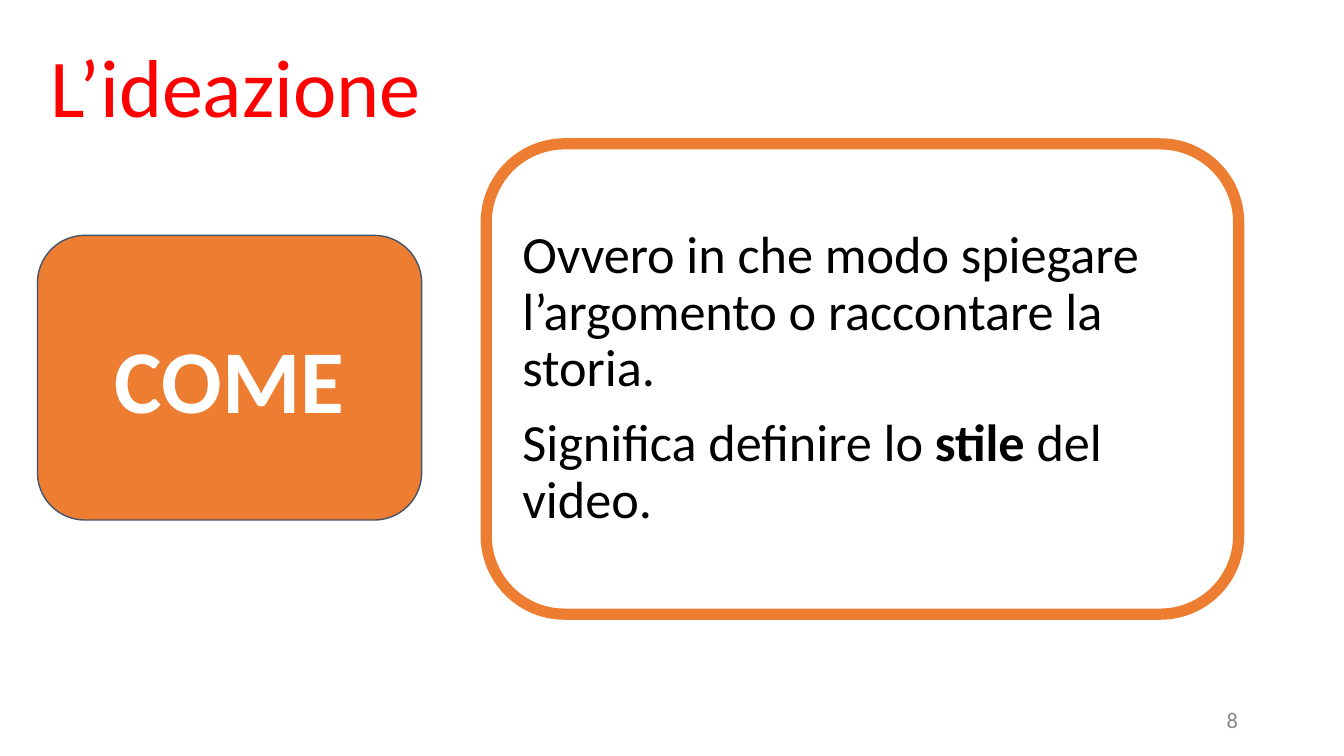
from dataclasses import dataclass

from pptx import Presentation
from pptx.dml.color import RGBColor as Rgb
from pptx.enum.shapes import MSO_SHAPE as Shape
from pptx.enum.text import MSO_ANCHOR as Anchor, MSO_AUTO_SIZE as Fit, PP_ALIGN as Align
from pptx.util import Cm, Pt


@dataclass(frozen=True)
class Theme:
    face: str = "Calibri"
    red: Rgb = Rgb(0xFF, 0x00, 0x00)
    orange: Rgb = Rgb(0xED, 0x7D, 0x31)
    slate: Rgb = Rgb(0x44, 0x54, 0x6A)
    gray: Rgb = Rgb(0x88, 0x88, 0x88)
    white: Rgb = Rgb(0xFF, 0xFF, 0xFF)
    black: Rgb = Rgb(0x00, 0x00, 0x00)
    title: Pt = Pt(44)
    badge: Pt = Pt(48)
    body: Pt = Pt(28)
    small: Pt = Pt(12)


THEME = Theme()
LEFT = Cm(0.71)


def style(para, size, color, align=Align.LEFT, bold=None):
    para.alignment = align
    font = para.font
    font.name, font.size, font.bold = THEME.face, size, bold
    font.color.rgb = color


def set_frame(frame, inset):
    """Wrap and centre the text vertically, with the given top and bottom inset."""
    frame.word_wrap = True
    frame.auto_size = Fit.NONE
    frame.vertical_anchor = Anchor.MIDDLE
    frame.margin_left = frame.margin_right = Cm(0.25)
    frame.margin_top = frame.margin_bottom = inset


def add_title(slide, text):
    title = slide.shapes.title
    title.left, title.top = LEFT, Cm(0.33)
    title.width, title.height = Cm(21.89), Cm(2.77)
    frame = title.text_frame
    set_frame(frame, Cm(0.13))
    frame.text = text
    para = frame.paragraphs[0]
    style(para, THEME.title, THEME.red)
    para.line_spacing = 0.9


def add_card(slide, box, fill, line, width):
    card = slide.shapes.add_shape(Shape.ROUNDED_RECTANGLE, *box)
    card.shadow.inherit = False
    if fill is None:
        card.fill.background()
    else:
        card.fill.solid()
        card.fill.fore_color.rgb = fill
    card.line.color.rgb = line
    card.line.width = width
    set_frame(card.text_frame, Cm(0.25))
    return card.text_frame


def add_badge(slide, text):
    box = LEFT, Cm(4.45), Cm(7.26), Cm(5.38)
    frame = add_card(slide, box, THEME.orange, THEME.slate, Pt(0.75))
    frame.text = text
    style(frame.paragraphs[0], THEME.badge, THEME.white, Align.CENTER, True)


def add_panel(slide, paras):
    """Add the outlined card; each paragraph is a list of (text, bold) runs."""
    box = Cm(9.19), Cm(2.72), Cm(14.22), Cm(8.89)
    frame = add_card(slide, box, None, THEME.orange, Pt(6))
    for i, runs in enumerate(paras):
        para = frame.add_paragraph() if i else frame.paragraphs[0]
        style(para, THEME.body, THEME.black)
        para.line_spacing = 0.9
        para.space_before = Pt(10)
        for text, bold in runs:
            run = para.add_run()
            run.text = text
            run.font.bold = bold


def add_number(slide, text):
    box = slide.shapes.add_textbox(Cm(17.93), Cm(13.23), Cm(5.72), Cm(0.76))
    frame = box.text_frame
    set_frame(frame, Cm(0.13))
    frame.text = text
    style(frame.paragraphs[0], THEME.small, THEME.gray, Align.RIGHT)


def main():
    deck = Presentation()
    deck.slide_width, deck.slide_height = Cm(25.4), Cm(14.29)
    slide = deck.slides.add_slide(deck.slide_layouts.get_by_name("Title Only"))
    add_title(slide, "L’ideazione")
    add_number(slide, "8")
    add_badge(slide, "COME")
    add_panel(slide, [
        [("Ovvero in che modo spiegare l’argomento o raccontare la storia.", False)],
        [("Significa definire lo ", False), ("stile ", True), ("del video.", False)],
    ])
    deck.save("out.pptx")


if __name__ == "__main__":
    main()
